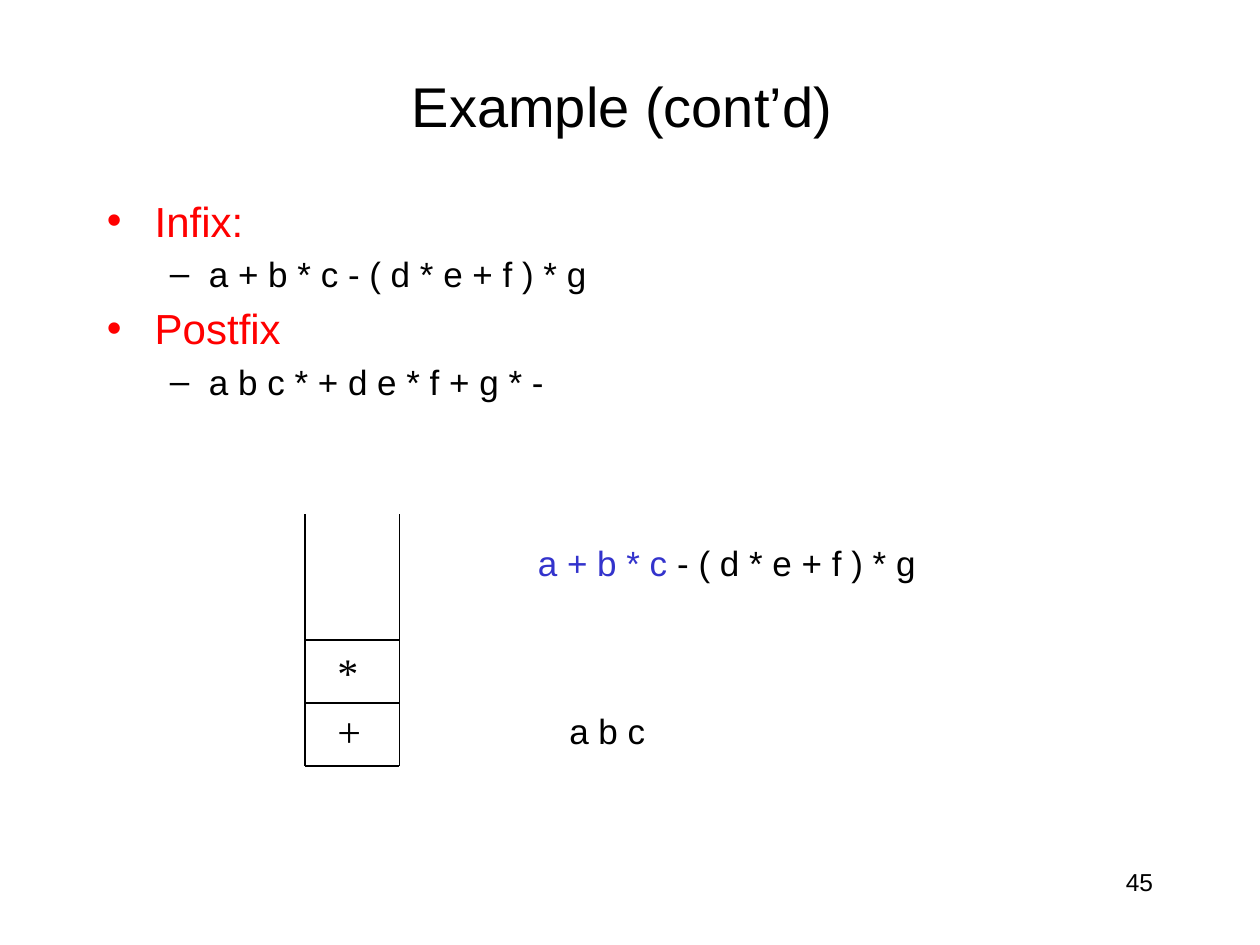
from dataclasses import dataclass

from lxml.etree import SubElement
from pptx import Presentation
from pptx.dml.color import RGBColor
from pptx.enum.shapes import MSO_CONNECTOR
from pptx.enum.text import MSO_ANCHOR, MSO_AUTO_SIZE, PP_ALIGN
from pptx.oxml.ns import qn
from pptx.util import Inches, Pt


@dataclass(frozen=True)
class Theme:
    ink: str = "000000"
    red: str = "FF0000"
    blue: str = "3333CC"
    sans: str = "Arial"
    serif: str = "Times New Roman"
    title: int = 32
    head: int = 24
    item: int = 20
    note: int = 14
    rule: float = 0.75


THEME = Theme()


def add_box(slide, box, **frame):
    """Add a text box with the given frame values and return its frame."""
    text = slide.shapes.add_textbox(*map(Inches, box)).text_frame
    for name, value in {"word_wrap": True, **frame}.items():
        setattr(text, name, value)
    return text


def add_run(par, words, size, color=THEME.ink, face=THEME.sans):
    run = par.add_run()
    run.text = words
    for name, value in {"size": Pt(size), "name": face}.items():
        setattr(run.font, name, value)
    run.font.color.rgb = RGBColor.from_string(color)


def set_indent(par, left, first=0, mark=None):
    """Indent a paragraph, lead it by a fifth of a line, and mark it if asked."""
    props = par._p.get_or_add_pPr()
    props.set("marL", str(Inches(left)))
    props.set("indent", str(Inches(first)))
    space = SubElement(props, qn("a:spcBef"))
    SubElement(space, qn("a:spcPct")).set("val", "20000")
    if mark:
        SubElement(props, qn("a:buFont")).set("typeface", THEME.sans)
        SubElement(props, qn("a:buChar")).set("char", mark)


def add_line(slide, start, end):
    line = slide.shapes.add_connector(
        MSO_CONNECTOR.STRAIGHT, *map(Inches, (*start, *end)))
    line.line.color.rgb = RGBColor.from_string(THEME.ink)
    line.line.width = Pt(THEME.rule)
    SubElement(line._element.spPr, qn("a:effectLst"))


def add_label(slide, box, words, size, align, **frame):
    par = add_box(slide, box, **frame).paragraphs[0]
    par.alignment = align
    add_run(par, words, size)


def add_list(slide, box, groups):
    text = add_box(slide, box)
    par = text.paragraphs[0]
    for head, item in groups:
        if par.runs:
            par = text.add_paragraph()
        set_indent(par, 0.38, -0.38, "•")
        add_run(par, head, THEME.head, THEME.red)
        par = text.add_paragraph()
        par.level = 1
        set_indent(par, 0.81, -0.31, "–")
        add_run(par, item, THEME.item)


def add_stack(slide, box, items, cell=0.5):
    """Draw an open-topped stack, with its items from the bottom up."""
    left, top, width, height = box
    right, base = left + width, top + height
    for side in (left, right):
        add_line(slide, (side, top), (side, base))
    for row in range(len(items) + 1):
        level = base - row * cell
        add_line(slide, (left, level), (right, level))
    for row, (sign, wide, drop) in enumerate(items):
        spot = (left + 0.16, base - (row + 1) * cell + drop, wide, cell)
        text = add_box(slide, spot, word_wrap=False,
                       auto_size=MSO_AUTO_SIZE.SHAPE_TO_FIT_TEXT)
        add_run(text.paragraphs[0], sign, THEME.head, face=THEME.serif)


def add_trace(slide, box, parts):
    text = add_box(slide, box, word_wrap=False,
                   auto_size=MSO_AUTO_SIZE.SHAPE_TO_FIT_TEXT)
    par = text.paragraphs[0]
    par.level = 1
    set_indent(par, 0.5)
    for words, color in parts:
        add_run(par, words, THEME.item, color)


def main():
    deck = Presentation()
    deck.slide_width, deck.slide_height = Inches(10), Inches(7.5)
    slide = deck.slides.add_slide(deck.slide_layouts[6])
    add_label(slide, (0.75, 0.42, 8.5, 0.83), "Example (cont’d) ",
              THEME.title, PP_ALIGN.CENTER, vertical_anchor=MSO_ANCHOR.MIDDLE)
    add_list(slide, (0.75, 1.5, 8.5, 5.17), [
        ("Infix:", "a + b * c - ( d * e + f ) * g"),
        ("Postfix", "a b c * + d e * f + g * -"),
    ])
    add_stack(slide, (2.42, 4.08, 0.75, 2),
              [("+", 0.39, -0.03), ("*", 0.37, 0)])
    add_trace(slide, (3.67, 4.25, 3.75, 0.43), [
        ("a + b * c ", THEME.blue), ("- ( d * e + f ) * g", THEME.ink)])
    add_trace(slide, (3.92, 5.58, 1.3, 0.43), [("a b c", THEME.ink)])
    add_label(slide, (7.17, 6.83, 2.08, 0.5), "45",
              THEME.note, PP_ALIGN.RIGHT)
    deck.save("out.pptx")


if __name__ == "__main__":
    main()
